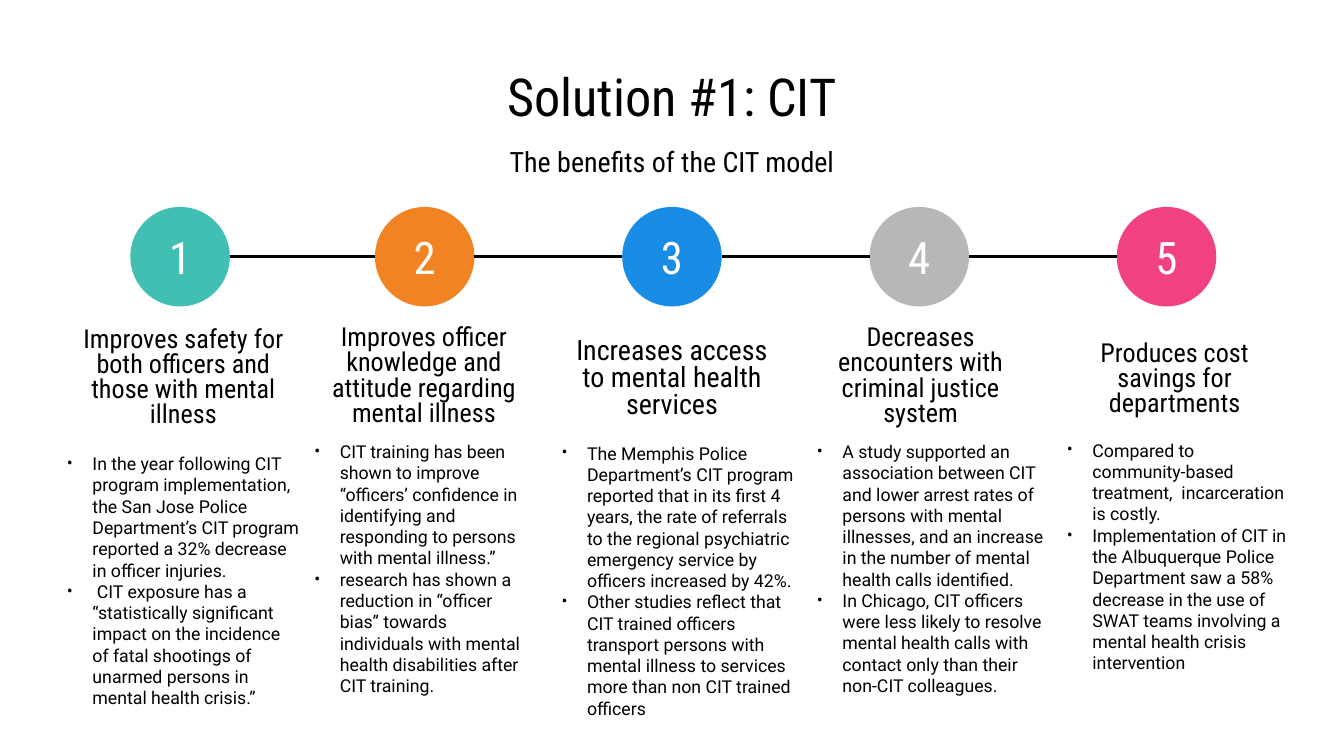
from dataclasses import dataclass
from itertools import pairwise

from lxml.etree import SubElement
from pptx import Presentation
from pptx.dml.color import RGBColor
from pptx.enum.shapes import MSO_CONNECTOR, MSO_SHAPE
from pptx.enum.text import MSO_ANCHOR, MSO_AUTO_SIZE, PP_ALIGN
from pptx.oxml.ns import qn
from pptx.util import Emu, Pt

PX = 9144  # EMU per px, 100 px to the inch
BLACK = RGBColor(0x00, 0x00, 0x00)
WHITE = RGBColor(0xFF, 0xFF, 0xFF)
TEAL = RGBColor(0x41, 0xBF, 0xB3)
ORANGE = RGBColor(0xF2, 0x83, 0x22)
BLUE = RGBColor(0x19, 0x8D, 0xE6)
GREY = RGBColor(0xB7, 0xB7, 0xB7)
PINK = RGBColor(0xF2, 0x41, 0x82)
HEADING_FONT = "Roboto Condensed"
BODY_FONT = "Roboto"
BODY_SIZE = 9.5

COLUMN_TOP = 154
CIRCLE_SIZE = 74
HEADING_HEIGHT = 53
BULLET_INDENT = 19


@dataclass
class Benefit:
    """Boxes are (left, top, width, height) from the column's top left corner."""
    column_left: int
    circle_left: int
    heading_box: tuple
    list_box: tuple
    color: RGBColor
    heading: str
    points: tuple
    heading_size: int = 14


BENEFITS = [
    Benefit(40, 57, (0, 101, 193, HEADING_HEIGHT), (0, 175, 193, 206), TEAL,
            "Improves safety for both officers and those with mental illness",
            ("In the year following CIT program implementation, the San Jose Police "
             "Department’s CIT program reported a 32% decrease in officer injuries.",
             " CIT exposure has a “statistically significant impact on the incidence "
             "of fatal shootings of unarmed persons in mental health crisis.”")),
    Benefit(224, 55, (8, 100, 167, HEADING_HEIGHT), (0, 175, 184, 188), ORANGE,
            "Improves officer knowledge and attitude regarding mental illness",
            ("CIT training has been shown to improve “officers’ confidence in "
             "identifying and responding to persons with mental illness.”",
             "research has shown a reduction in “officer bias” towards individuals "
             "with mental health disabilities after CIT training.")),
    Benefit(408, 55, (10, 102, 164, HEADING_HEIGHT), (0, 175, 196, 206), BLUE,
            "Increases access to mental health services",
            ("The Memphis Police Department’s CIT program reported that in its first "
             "4 years, the rate of referrals to the regional psychiatric emergency "
             "service by officers increased by 42%.",
             "Other studies reflect that CIT trained officers transport persons with "
             "mental illness to services more than non CIT trained officers"), 15),
    Benefit(598, 49, (-5, 100, 184, HEADING_HEIGHT), (0, 162, 191, 214), GREY,
            "Decreases encounters with criminal justice system",
            ("A study supported an association between CIT and lower arrest rates of "
             "persons with mental illnesses, and an increase in the number of mental "
             "health calls identified.",
             "In Chicago, CIT officers were less likely to resolve mental health calls "
             "with contact only than their non-CIT colleagues.")),
    Benefit(784, 47, (8, 102, 164, HEADING_HEIGHT), (0, 224, 184, 72), PINK,
            "Produces cost savings for departments",
            ("Compared to community-based treatment,  incarceration is costly.",
             "Implementation of CIT in the Albuquerque Police Department saw a 58% "
             "decrease in the use of SWAT teams involving a mental health crisis "
             "intervention")),
]


def emu(*lengths):
    return [Emu(length * PX) for length in lengths]


def write(shape, texts, size, font=HEADING_FONT, color=BLACK,
          align=PP_ALIGN.CENTER, spacing=1.0):
    """Fill the shape with one paragraph per text and return the paragraphs."""
    frame = shape.text_frame
    frame.word_wrap = True
    frame.auto_size = MSO_AUTO_SIZE.NONE
    frame.vertical_anchor = MSO_ANCHOR.MIDDLE
    frame.margin_left = frame.margin_right = Emu(10 * PX)
    frame.margin_top = frame.margin_bottom = Emu(10 * PX)
    frame.text = "\n".join(texts)
    for paragraph in frame.paragraphs:
        paragraph.alignment = align
        paragraph.line_spacing = spacing
        paragraph.font.name = font
        paragraph.font.size = Pt(size)
        paragraph.font.color.rgb = color
    return frame.paragraphs


def add_bullet(paragraph):
    properties = paragraph._p.get_or_add_pPr()
    properties.set("marL", str(BULLET_INDENT * PX))
    properties.set("indent", str(-BULLET_INDENT * PX))
    default_run = properties.find(qn("a:defRPr"))
    color = SubElement(properties, qn("a:buClr"))
    SubElement(color, qn("a:srgbClr"), val=str(BLACK))
    SubElement(properties, qn("a:buSzPts"), val=str(int(BODY_SIZE * 100)))
    SubElement(properties, qn("a:buFont"), typeface=BODY_FONT)
    SubElement(properties, qn("a:buChar"), char="•")
    properties.append(default_run)  # the schema wants it after the bullet


def add_header(slide, left, top, width):
    title = slide.shapes.title
    title.left, title.top, title.width, title.height = emu(left, top, width, 53)
    write(title, ["Solution #1: CIT"], 28)
    subtitle = slide.shapes.add_textbox(*emu(left + 16, top + 55, width - 32, 40))
    write(subtitle, ["The benefits of the CIT model"], 15)


def add_benefit(slide, left, top, number, benefit):
    """Place one column and return its numbered circle."""
    def add_text_box(box):
        x, y, width, height = box
        return slide.shapes.add_textbox(*emu(left + x, top + y, width, height))

    write(add_text_box(benefit.heading_box), [benefit.heading],
          benefit.heading_size, spacing=0.8)
    points = write(add_text_box(benefit.list_box), benefit.points, BODY_SIZE,
                   font=BODY_FONT, align=PP_ALIGN.LEFT)
    for point in points:
        add_bullet(point)

    circle = slide.shapes.add_shape(
        MSO_SHAPE.OVAL, *emu(left + benefit.circle_left, top, CIRCLE_SIZE, CIRCLE_SIZE))
    circle.shadow.inherit = False
    circle.fill.solid()
    circle.fill.fore_color.rgb = benefit.color
    circle.line.fill.background()
    write(circle, [str(number)], 24, color=WHITE)
    return circle


def link_circles(slide, start, end):
    middle = start.top + start.height // 2
    link = slide.shapes.add_connector(
        MSO_CONNECTOR.STRAIGHT, start.left + start.width, middle, end.left, middle)
    link.line.color.rgb = BLACK
    link.line.width = Pt(1.5)
    SubElement(link._element.spPr, qn("a:effectLst"))


def main():
    presentation = Presentation()
    presentation.slide_width = Emu(1000 * PX)
    presentation.slide_height = Emu(1000 * PX * 9 // 16)
    title_only = presentation.slide_layouts[5]
    slide = presentation.slides.add_slide(title_only)

    add_header(slide, 34, 45, 932)
    circles = [add_benefit(slide, benefit.column_left, COLUMN_TOP, number, benefit)
               for number, benefit in enumerate(BENEFITS, start=1)]
    for start, end in pairwise(circles):
        link_circles(slide, start, end)

    presentation.save("out.pptx")


if __name__ == "__main__":
    main()
